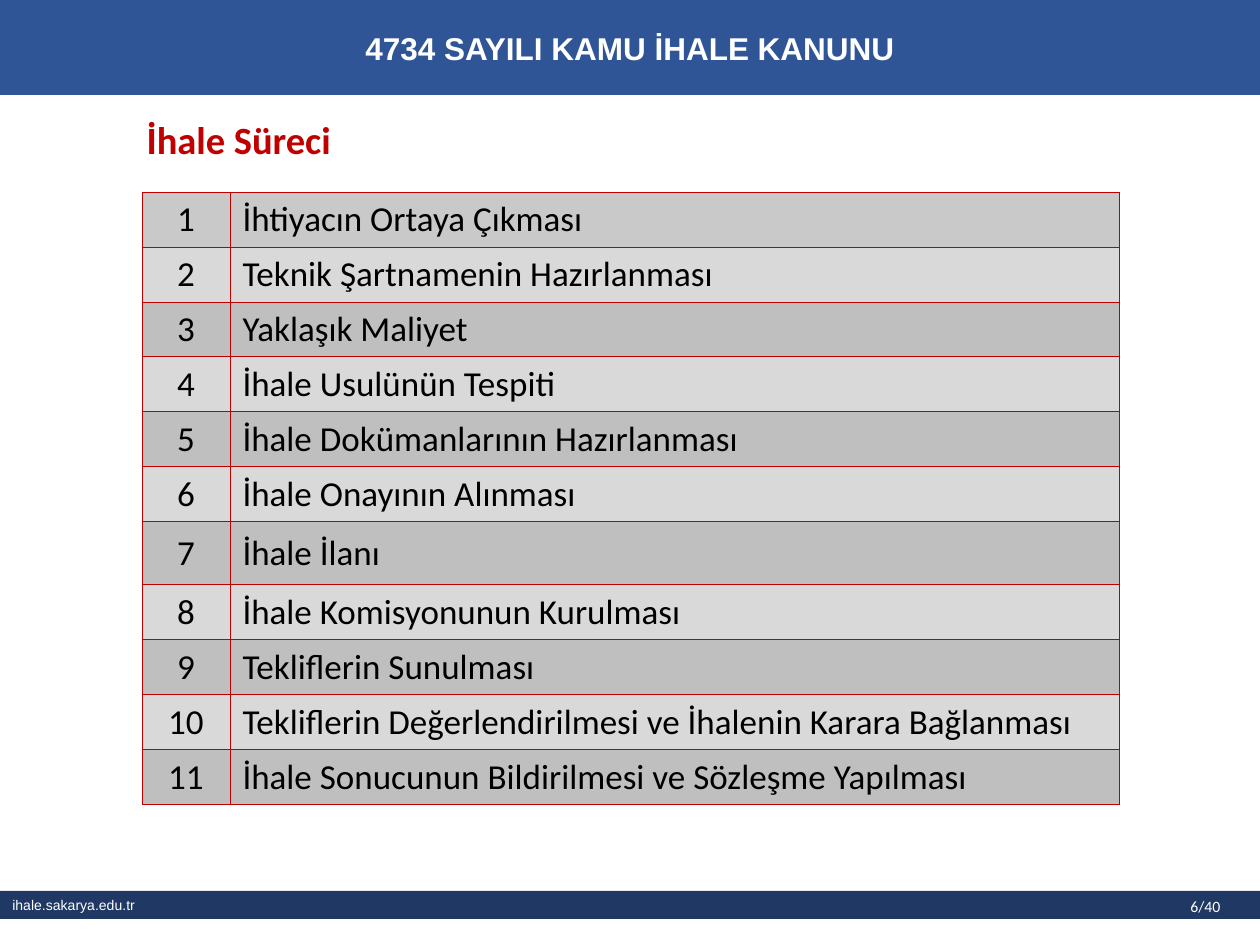
import pptx
import pptx.dml.color
import pptx.enum.shapes
import pptx.enum.text
import pptx.oxml
import pptx.oxml.ns
import pptx.util

PX = 914400 // 126
ALIGN = pptx.enum.text.PP_ALIGN
ANCHOR = pptx.enum.text.MSO_ANCHOR
STEPS = [
    "İhtiyacın Ortaya Çıkması",
    "Teknik Şartnamenin Hazırlanması",
    "Yaklaşık Maliyet",
    "İhale Usulünün Tespiti",
    "İhale Dokümanlarının Hazırlanması",
    "İhale Onayının Alınması",
    "İhale İlanı",
    "İhale Komisyonunun Kurulması",
    "Tekliflerin Sunulması",
    "Tekliflerin Değerlendirilmesi ve İhalenin Karara Bağlanması",
    "İhale Sonucunun Bildirilmesi ve Sözleşme Yapılması",
]
ROW_H, TALL_ROW_H, TALL_ROW = 55, 63, 7
NUMBER_W = 88


def px(*lengths):
    return [pptx.util.Emu(n * PX) for n in lengths]


def rgb(color):
    return pptx.dml.color.RGBColor.from_string(color)


def write(tf, text, size, font, color, bold=False, align=ALIGN.LEFT):
    p = tf.paragraphs[0]
    p.text = text
    p.alignment = align
    p.font.size = pptx.util.Pt(size)
    p.font.name = font
    p.font.bold = bold
    p.font.color.rgb = rgb(color)
    return p


def add_bar(s, box, fill, text, size, bold=False, align=ALIGN.LEFT):
    sp = s.shapes.add_shape(pptx.enum.shapes.MSO_SHAPE.RECTANGLE, *px(*box))
    sp.shadow.inherit = False
    sp.fill.solid()
    sp.fill.fore_color.rgb = rgb(fill)
    sp.line.fill.background()
    sp.text_frame.vertical_anchor = ANCHOR.MIDDLE
    write(sp.text_frame, text, size, "Arial", "FFFFFF", bold, align)


def add_page_number(s, box, text):
    tf = s.shapes.add_textbox(*px(*box)).text_frame
    tf.word_wrap = True
    write(tf, text, 9, "Calibri", "FFFFFF")


def place_title(s, box, text):
    sp = s.shapes.title
    sp.left, sp.top, sp.width, sp.height = px(*box)
    tf = sp.text_frame
    tf.auto_size = pptx.enum.text.MSO_AUTO_SIZE.NONE
    tf.vertical_anchor = ANCHOR.TOP
    p = write(tf, text, 22, "Calibri", "C00000", bold=True)
    p.line_spacing = 0.9
    p.space_before = pptx.util.Pt(0)


def set_borders(cell, color, width):
    tcPr = cell._tc.get_or_add_tcPr()
    for i, side in enumerate(("lnL", "lnR", "lnT", "lnB")):
        tcPr.insert(i, pptx.oxml.parse_xml(
            f'<a:{side} {pptx.oxml.ns.nsdecls("a")} w="{pptx.util.Pt(width)}">'
            f'<a:solidFill><a:srgbClr val="{color}"/></a:solidFill></a:{side}>'))


def step_fill(number):
    if number == 1:
        return "C9C9C9"
    return "BFBFBF" if number % 2 else "D9D9D9"


def add_steps_table(s, left, top, width, steps):
    heights = [TALL_ROW_H if n == TALL_ROW else ROW_H
               for n in range(1, len(steps) + 1)]
    table = s.shapes.add_table(
        len(steps), 2, *px(left, top, width, sum(heights))).table
    table.first_row = table.horz_banding = False
    table.columns[0].width, table.columns[1].width = px(NUMBER_W, width - NUMBER_W)
    for number, (row, step, height) in enumerate(
            zip(table.rows, steps, heights), 1):
        row.height, = px(height)
        values = ((str(number), ALIGN.CENTER), (step, ALIGN.LEFT))
        for cell, (text, align) in zip(row.cells, values):
            cell.vertical_anchor = ANCHOR.MIDDLE
            cell.fill.solid()
            cell.fill.fore_color.rgb = rgb(step_fill(number))
            set_borders(cell, "C00000", 0.5)
            write(cell.text_frame, text, 20, "Calibri", "000000", align=align)


def main():
    prs = pptx.Presentation()
    prs.slide_width, prs.slide_height = px(1260, 945)
    s = prs.slides.add_slide(prs.slide_layouts[5])
    add_bar(s, (0, 891, 1260, 28), "203864", "ihale.sakarya.edu.tr", 8)
    add_bar(s, (0, 0, 1260, 95), "2F5597", "4734 SAYILI KAMU İHALE KANUNU",
            18, bold=True, align=ALIGN.CENTER)
    add_page_number(s, (1178, 891, 117, 31), "6/40")
    place_title(s, (134, 115, 1135, 59), "İhale Süreci")
    add_steps_table(s, 142, 192, 978, STEPS)
    prs.save("out.pptx")


if __name__ == "__main__":
    main()
